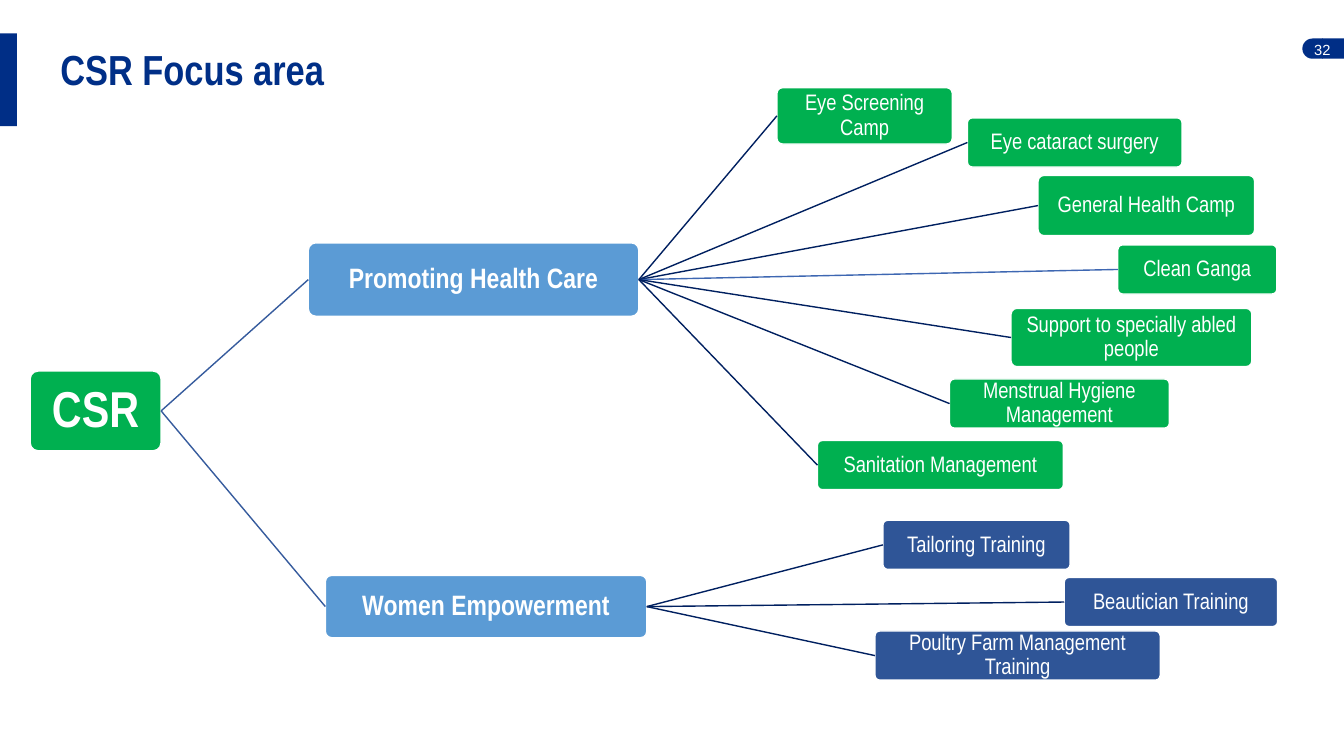
from lxml.etree import SubElement
from pptx import Presentation
from pptx.dml.color import RGBColor
from pptx.enum.shapes import MSO_CONNECTOR, MSO_SHAPE
from pptx.enum.text import MSO_ANCHOR, PP_ALIGN
from pptx.oxml.ns import qn
from pptx.util import Cm, Pt

COLORS = {
    "navy": "002E86", "title": "002F87", "white": "FFFFFF",
    "green": "00B050", "sky": "5B9BD5", "indigo": "2F5597",
    "trunk": "365B9D", "branch": "002060", "accent": "3E67B2",
}
LEFT_SITE, RIGHT_SITE = 1, 3

prs = Presentation()
prs.slide_width, prs.slide_height = Cm(33.87), Cm(19.05)
slide = prs.slides.add_slide(prs.slide_layouts[6])


def write(shape, text, size, color, font="Arial Narrow", bold=False):
    frame = shape.text_frame
    frame.word_wrap = True
    frame.vertical_anchor = MSO_ANCHOR.MIDDLE
    paragraph = frame.paragraphs[0]
    paragraph.text = text
    paragraph.line_spacing = 0.9
    paragraph.font.name = font
    paragraph.font.size = Pt(size)
    paragraph.font.bold = bold
    paragraph.font.color.rgb = RGBColor.from_string(COLORS[color])
    return paragraph


def add_node(text, place, fill, size=16, bold=False, inset=0.04, parent=None, link="branch"):
    node = slide.shapes.add_shape(MSO_SHAPE.ROUNDED_RECTANGLE, *map(Cm, place))
    node.adjustments[0] = 0.1
    node.shadow.inherit = False
    node.fill.solid()
    node.fill.fore_color.rgb = RGBColor.from_string(COLORS[fill])
    node.line.color.rgb = RGBColor.from_string(COLORS["white"])
    node.line.width = Pt(1)
    frame = node.text_frame
    frame.margin_left = frame.margin_right = Cm(inset)
    frame.margin_top = frame.margin_bottom = Cm(inset)
    write(node, text, size, "white", bold=bold).alignment = PP_ALIGN.CENTER
    if parent is not None:
        line = slide.shapes.add_connector(MSO_CONNECTOR.STRAIGHT, 0, 0, 0, 0)
        line.begin_connect(parent, RIGHT_SITE)
        line.end_connect(node, LEFT_SITE)
        line.line.color.rgb = RGBColor.from_string(COLORS[link])
        line.line.width = Pt(1)
        SubElement(line._element.spPr, qn("a:effectLst"))
    return node


# Title bar and page number tab
for kind, place, rotation in [
    (MSO_SHAPE.FLOWCHART_DELAY, (32.82, 0.97, 0.51, 0.51), 180),
    (MSO_SHAPE.RECTANGLE, (33.32, 0.97, 0.55, 0.51), 0),
    (MSO_SHAPE.RECTANGLE, (0, 0.84, 0.43, 2.34), 0),
]:
    decoration = slide.shapes.add_shape(kind, *map(Cm, place))
    decoration.rotation = rotation
    decoration.shadow.inherit = False
    decoration.fill.solid()
    decoration.fill.fore_color.rgb = RGBColor.from_string(COLORS["navy"])
    decoration.line.fill.background()

page_number = slide.shapes.add_textbox(Cm(32.87), Cm(0.76), Cm(1.07), Cm(1.02))
write(page_number, "32", 10.5, "white", font="Arial")
title = slide.shapes.add_textbox(Cm(1.27), Cm(1.04), Cm(31.24), Cm(1.52))
write(title, "CSR Focus area", 30, "title", bold=True)

# Focus areas: name, place, fill of activities, activities (name, place, link color)
focus_areas = [
    ("Promoting Health Care", (7.77, 6.12, 8.33, 1.85), "green", [
        ("Eye Screening Camp", (19.58, 2.21, 4.42, 1.42), "branch"),
        ("Eye cataract surgery", (24.38, 2.97, 5.41, 1.24), "branch"),
        ("General Health Camp", (26.16, 4.42, 5.46, 1.52), "branch"),
        ("Clean Ganga", (28.17, 6.17, 4.01, 1.24), "accent"),
        ("Support to specially abled people", (25.48, 7.77, 6.07, 1.47), "branch"),
        ("Menstrual Hygiene Management", (23.93, 9.55, 5.54, 1.24), "branch"),
        ("Sanitation Management", (20.6, 11.1, 6.2, 1.24), "branch"),
    ]),
    ("Women Empowerment", (8.2, 14.5, 8.1, 1.57), "indigo", [
        ("Tailoring Training", (22.25, 13.11, 4.72, 1.24), "branch"),
        ("Beautician Training", (26.82, 14.55, 5.38, 1.24), "branch"),
        ("Poultry Farm Management Training", (22.05, 15.9, 7.19, 1.24), "branch"),
    ]),
]

# Tree
csr = add_node("CSR", (0.76, 9.35, 3.3, 2.01), "green", size=36, bold=True, inset=0.08)
for area_name, area_place, activity_fill, activities in focus_areas:
    area = add_node(area_name, area_place, "sky", size=20, bold=True, parent=csr, link="trunk")
    for activity_name, activity_place, link in activities:
        add_node(activity_name, activity_place, activity_fill, parent=area, link=link)

prs.save("out.pptx")
